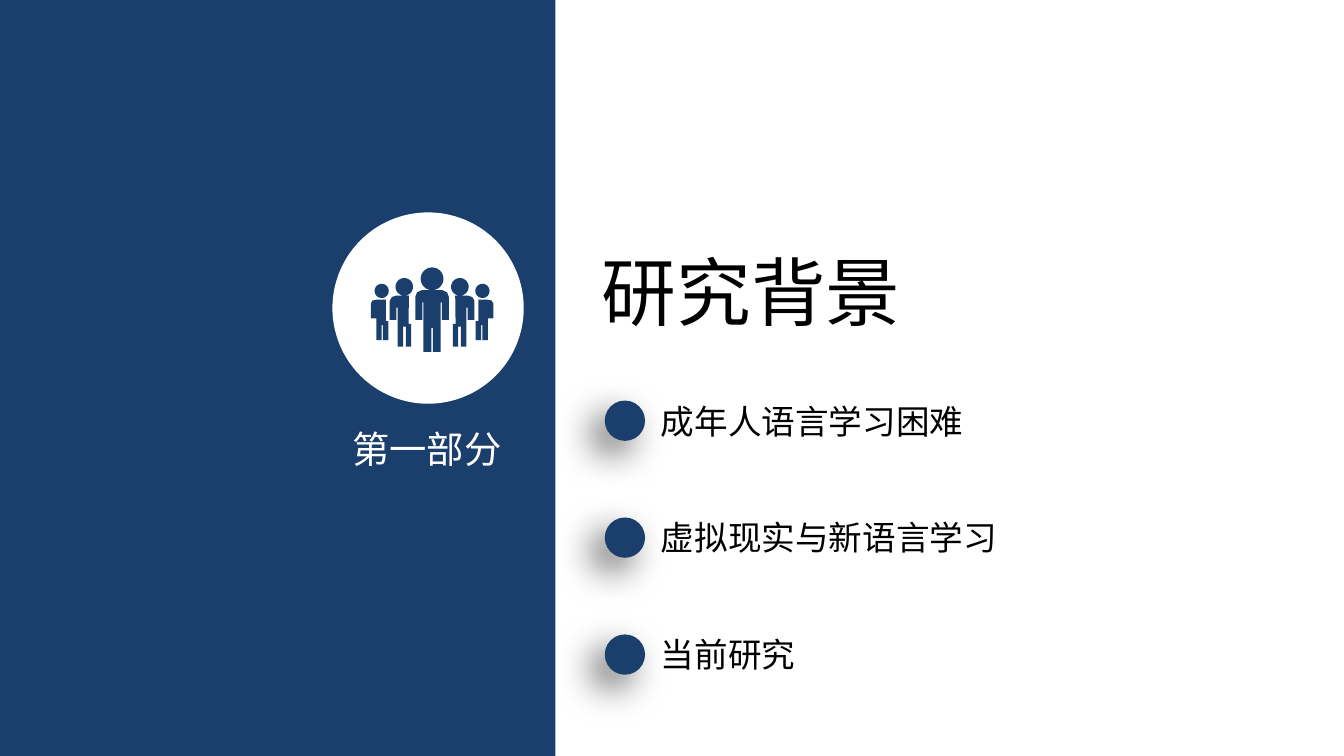
from math import cos, pi, sin

from lxml.etree import SubElement
from pptx import Presentation
from pptx.dml.color import RGBColor
from pptx.enum.shapes import MSO_SHAPE
from pptx.enum.text import MSO_AUTO_SIZE
from pptx.oxml.ns import qn
from pptx.util import Pt

NAVY = RGBColor(0x1A, 0x3F, 0x6C)
WHITE = RGBColor(0xFF, 0xFF, 0xFF)
BLACK = RGBColor(0x00, 0x00, 0x00)
FONT = "Noto Sans CJK SC"

TITLE = "研究背景"
PART = "第一部分"
TOPICS = ["成年人语言学习困难", "虚拟现实与新语言学习", "当前研究"]

# Crowd icon: x is the offset from the axis of symmetry, y is on the slide.
AXIS = 231.5
HEADS = [(0, 149.4, 6.1), (14.9, 153.7, 4.7), (27, 155.9, 3.8)]  # x, y, radius
LEADER_HALF = [(0.4, 175.7), (0.4, 188.6), (4.6, 188.6), (4.6, 162), (5.2, 162),
               (5.2, 171.4), (9, 171.4), (9, 159.1), (8, 156.6), (5.5, 155.5)]
SECOND = [(11.2, 173.5), (11.2, 185.8), (14, 185.8), (14, 175), (15.5, 175),
          (15.5, 185.8), (18.4, 185.8), (18.4, 164.9), (19.1, 164.9), (19.1, 171.4),
          (22.7, 171.4), (22.7, 161.3), (21.6, 159.2), (19.1, 158.4),
          (12.4, 158.4), (12.6, 173.5)]
THIRD = [(23.4, 172.1), (23.4, 182.2), (26.3, 182.2), (26.3, 174.2), (27, 174.2),
         (27, 182.2), (29.9, 182.2), (29.9, 170.6), (32.8, 170.6), (32.8, 162.7),
         (32, 161.1), (29.9, 160.6), (24.8, 160.6), (24.8, 172.1)]

ROW_TOP, ROW_STEP = 211, 62.65
DOT_LEFT, DOT_SIZE, DOT_DROP = 324, 21.6, 3.6


def mirror(points):
    return [(-x, y) for x, y in points]


def circle(x, y, radius, steps=32):
    angles = [2 * pi * step / steps for step in range(steps)]
    return [(x + radius * cos(angle), y + radius * sin(angle)) for angle in angles]


def paint(shape, color):
    shape.shadow.inherit = False
    shape.fill.solid()
    shape.fill.fore_color.rgb = color
    shape.line.fill.background()


def add_shape(slide, kind, left, top, width, height, color):
    shape = slide.shapes.add_shape(kind, Pt(left), Pt(top), Pt(width), Pt(height))
    paint(shape, color)
    return shape


def add_text(slide, text, left, top, width, height, size, color=BLACK,
             wrap=False, inset=None):
    box = slide.shapes.add_textbox(Pt(left), Pt(top), Pt(width), Pt(height))
    frame = box.text_frame
    frame.word_wrap = wrap
    frame.auto_size = MSO_AUTO_SIZE.SHAPE_TO_FIT_TEXT
    if inset is not None:
        frame.margin_left = frame.margin_right = Pt(inset)
        frame.margin_top = frame.margin_bottom = Pt(inset)
    run = frame.paragraphs[0].add_run()
    run.text = text
    run.font.size = Pt(size)
    run.font.color.rgb = color
    run.font.name = FONT
    SubElement(run.font._element, qn("a:ea"), typeface=FONT)


def add_soft_shadow(shape):
    """Cast a blurred shadow down to the left."""
    effects = shape._element.spPr.find(qn("a:effectLst"))
    shadow = SubElement(effects, qn("a:outerShdw"), blurRad=str(Pt(20)),
                        dist=str(Pt(10)), dir=str(135 * 60000), algn="tr",
                        rotWithShape="0")
    color = SubElement(shadow, qn("a:srgbClr"), val=str(BLACK))
    SubElement(color, qn("a:alpha"), val="60000")


def add_crowd(slide):
    outlines = [LEADER_HALF + mirror(LEADER_HALF)[::-1], circle(*HEADS[0])]
    for side in [SECOND, THIRD, circle(*HEADS[1]), circle(*HEADS[2])]:
        outlines += [side, mirror(side)]
    builder = None
    for outline in outlines:
        start, *rest = [(Pt(AXIS + x), Pt(y)) for x, y in outline]
        if builder is None:
            builder = slide.shapes.build_freeform(*start)
        else:
            builder.move_to(*start)
        builder.add_line_segments(rest, close=True)
    paint(builder.convert_to_shape(), NAVY)


def main():
    presentation = Presentation()
    presentation.slide_width, presentation.slide_height = Pt(720), Pt(405)
    slide = presentation.slides.add_slide(presentation.slide_layouts[6])

    add_shape(slide, MSO_SHAPE.RECTANGLE, 0, 0, 297.5, 405, NAVY)
    add_text(slide, TITLE, 315.4, 128.2, 174.4, 55.4, size=40)
    add_text(slide, PART, 188.6, 228.2, 98, 24.5, size=20, color=WHITE,
             wrap=True, inset=0)
    add_shape(slide, MSO_SHAPE.OVAL, 178.1, 113.8, 102.5, 102.5, WHITE)
    add_crowd(slide)

    for row, topic in enumerate(TOPICS):
        top = ROW_TOP + row * ROW_STEP
        dot = add_shape(slide, MSO_SHAPE.OVAL, DOT_LEFT, top + DOT_DROP,
                        DOT_SIZE, DOT_SIZE, NAVY)
        add_soft_shadow(dot)
        add_text(slide, topic, 347, top, 18 * len(topic) + 14.4, 28.8, size=18)

    presentation.save("out.pptx")


if __name__ == "__main__":
    main()
